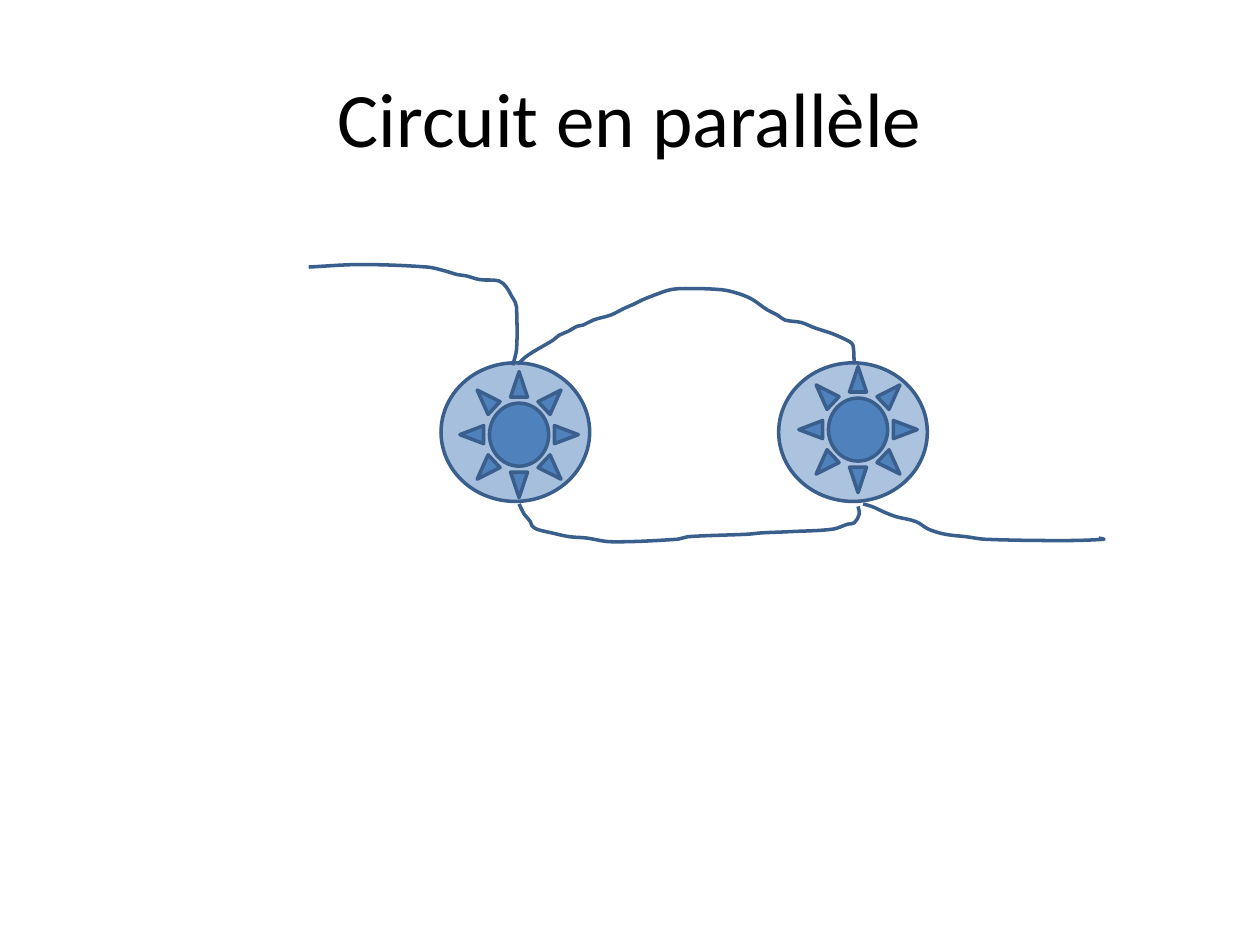
from dataclasses import dataclass
from math import dist

from lxml.etree import SubElement
from pptx import Presentation
from pptx.dml.color import RGBColor
from pptx.enum.shapes import MSO_SHAPE as Shp
from pptx.enum.text import MSO_ANCHOR, PP_ALIGN
from pptx.oxml.ns import qn
from pptx.util import Inches, Pt

BLUE, OUTLINE, BLACK = "4F81BD", "3A5F8C", "000000"
Point = tuple[float, float]


@dataclass
class Lamp:
    left: float
    top: float
    sun_left: float
    sun_top: float
    opacity: int  # percent


LAMPS = [Lamp(3.5, 2.88, 3.65, 2.95, 50), Lamp(6.18, 2.88, 6.34, 2.91, 47)]

# Points each hand-drawn wire passes through, in inches
WIRE_IN = [
    (2.45, 2.12), (2.86, 2.1), (3.39, 2.12), (3.53, 2.15), (3.63, 2.18),
    (3.7, 2.19), (3.81, 2.22), (3.96, 2.23), (4.02, 2.28), (4.06, 2.35),
    (4.09, 2.4), (4.1, 2.44), (4.1, 2.77), (4.07, 2.9)]
UPPER_WIRE = [
    (4.11, 2.89), (4.19, 2.82), (4.34, 2.73), (4.39, 2.7), (4.44, 2.66),
    (4.51, 2.63), (4.58, 2.59), (4.63, 2.58), (4.71, 2.54), (4.85, 2.5),
    (4.95, 2.45), (5.04, 2.41), (5.1, 2.38), (5.2, 2.34), (5.32, 2.3),
    (5.44, 2.29), (5.73, 2.3), (5.86, 2.33), (5.96, 2.37), (6.02, 2.41),
    (6.09, 2.46), (6.17, 2.5), (6.23, 2.54), (6.36, 2.56), (6.46, 2.6),
    (6.52, 2.62), (6.61, 2.65), (6.74, 2.71), (6.77, 2.74), (6.78, 2.89)]
LOWER_WIRE = [
    (4.12, 4), (4.16, 4.08), (4.21, 4.14), (4.22, 4.17), (4.26, 4.2),
    (4.38, 4.23), (4.52, 4.26), (4.65, 4.27), (4.85, 4.3), (5.38, 4.28),
    (5.46, 4.26), (5.94, 4.24), (6.04, 4.23), (6.27, 4.22), (6.61, 4.2),
    (6.73, 4.16), (6.78, 4.15), (6.82, 4.08), (6.81, 4.02)]
WIRE_OUT = [
    (6.85, 4), (6.92, 4.02), (7.03, 4.07), (7.11, 4.1), (7.27, 4.14),
    (7.37, 4.2), (7.5, 4.24), (7.67, 4.26), (7.82, 4.28), (8.44, 4.29),
    (8.76, 4.28), (8.72, 4.27)]


def rgb(color: str) -> RGBColor:
    return RGBColor.from_string(color)


def style(sp, fill: str | None = None, opacity: int = 100) -> None:
    """Set the outline and fill shared by all drawn parts."""
    sp.shadow.inherit = False
    sp.line.color.rgb = rgb(OUTLINE)
    sp.line.width = Pt(2)
    if fill is None:
        sp.fill.background()
        return
    sp.fill.solid()
    sp.fill.fore_color.rgb = rgb(fill)
    if opacity < 100:
        clr = sp._element.spPr.find(qn("a:solidFill")).find(qn("a:srgbClr"))
        SubElement(clr, qn("a:alpha"), val=str(opacity * 1000))


def control(at: Point, before: Point, after: Point, reach: float) -> Point:
    """Step from a point along the direction of its neighbours."""
    span = dist(before, after) or 1
    return (at[0] + (after[0] - before[0]) / span * reach,
            at[1] + (after[1] - before[1]) / span * reach)


def round_corners(sp) -> None:
    """Turn the straight segments of a freeform into smooth Bézier curves."""
    pts = list(sp._element.iter(qn("a:pt")))
    xy = [(int(pt.get("x")), int(pt.get("y"))) for pt in pts]
    padded = [xy[0], *xy, xy[-1]]
    for pt, a, b, c, d in zip(pts[1:], padded, padded[1:], padded[2:],
                              padded[3:]):
        reach = dist(b, c) / 3
        segment = pt.getparent()
        curve = SubElement(segment.getparent(), qn("a:cubicBezTo"))
        for x, y in (control(b, a, c, reach), control(c, d, b, reach), c):
            SubElement(curve, qn("a:pt"), x=str(round(x)), y=str(round(y)))
        segment.getparent().replace(segment, curve)


def add_wire(shapes, points: list[Point]) -> None:
    start, *rest = [(Inches(x), Inches(y)) for x, y in points]
    builder = shapes.build_freeform(*start)
    builder.add_line_segments(rest, close=False)
    sp = builder.convert_to_shape()
    round_corners(sp)
    style(sp)


def add_bulb(shapes, lamp: Lamp) -> None:
    sp = shapes.add_shape(Shp.OVAL, Inches(lamp.left), Inches(lamp.top),
                          Inches(1.18), Inches(1.1))
    style(sp, BLUE, lamp.opacity)


def add_sun(shapes, lamp: Lamp) -> None:
    sp = shapes.add_shape(Shp.SUN, Inches(lamp.sun_left), Inches(lamp.sun_top),
                          Inches(0.94), Inches(1))
    style(sp, BLUE)


def set_title(title, text: str) -> None:
    box = {"left": 0.5, "top": 0.3, "width": 9, "height": 1.25}
    for attr, value in box.items():
        setattr(title, attr, Inches(value))
    tf = title.text_frame
    tf.vertical_anchor = MSO_ANCHOR.MIDDLE
    p = tf.paragraphs[0]
    p.alignment = PP_ALIGN.CENTER
    r = p.add_run()
    r.text = text
    for attr, value in {"name": "Calibri", "size": Pt(44)}.items():
        setattr(r.font, attr, value)
    r.font.color.rgb = rgb(BLACK)


def main() -> None:
    prs = Presentation()
    prs.slide_width, prs.slide_height = Inches(10), Inches(7.5)
    slide = prs.slides.add_slide(prs.slide_layouts[5])
    shapes = slide.shapes
    set_title(shapes.title, "Circuit en parallèle")

    # Bulbs at the back, then wires, then the lights
    for lamp in LAMPS:
        add_bulb(shapes, lamp)
    for points in (WIRE_IN, UPPER_WIRE, LOWER_WIRE, WIRE_OUT):
        add_wire(shapes, points)
    for lamp in reversed(LAMPS):
        add_sun(shapes, lamp)

    prs.save("out.pptx")


if __name__ == "__main__":
    main()
